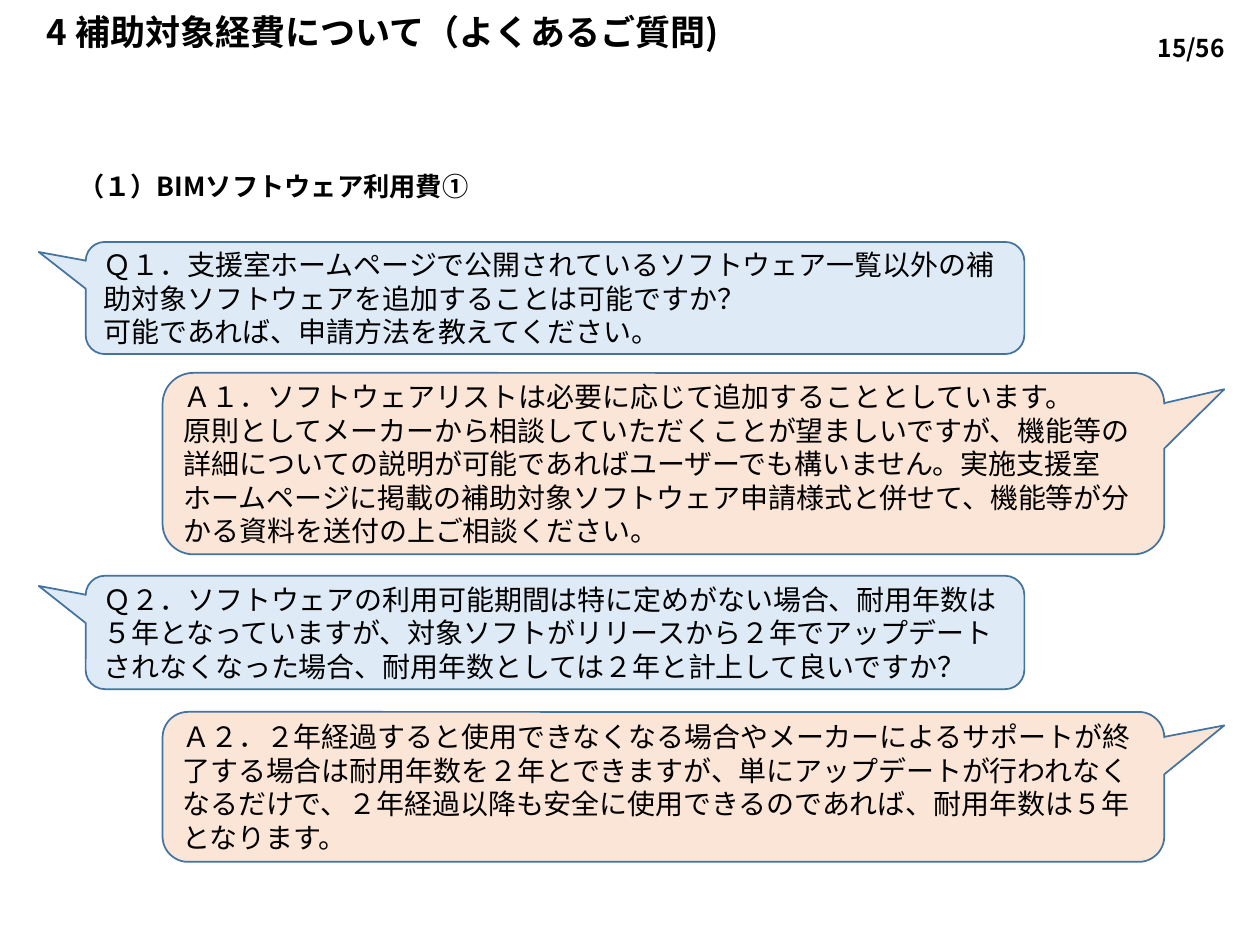
from lxml import etree
from pptx import Presentation
from pptx import util as u
from pptx.dml.color import RGBColor
from pptx.enum import shapes, text
from pptx.oxml.ns import qn

FONT = "Noto Sans CJK JP"
BLACK = RGBColor(0x00, 0x00, 0x00)
BLUE = RGBColor(0xDE, 0xEB, 0xF7)
ORANGE = RGBColor(0xFB, 0xE5, 0xD6)
OUTLINE = RGBColor(0x43, 0x73, 0x9E)

QUESTION = {"left": 0.68, "width": 7.45, "fill": BLUE, "tail": (-0.55, -0.41)}
ANSWER = {"left": 1.29, "width": 7.95, "fill": ORANGE, "tail": (0.56, -0.41)}

DIALOGUE = [
    (QUESTION, 1.92, 0.89, [
        "Ｑ１．支援室ホームページで公開されているソフトウェア一覧以外の補助対象ソフトウェアを追加することは可能ですか？",
        "可能であれば、申請方法を教えてください。"]),
    (ANSWER, 2.96, 1.44, [
        "Ａ１．ソフトウェアリストは必要に応じて追加することとしています。",
        "原則としてメーカーから相談していただくことが望ましいですが、機能等の詳細についての説明が可能であればユーザーでも構いません。"
        "実施支援室ホームページに掲載の補助対象ソフトウェア申請様式と併せて、機能等が分かる資料を送付の上ご相談ください。"]),
    (QUESTION, 4.57, 0.9, [
        "Ｑ２．ソフトウェアの利用可能期間は特に定めがない場合、耐用年数は５年となっていますが、"
        "対象ソフトがリリースから２年でアップデートされなくなった場合、耐用年数としては２年と計上して良いですか？"]),
    (ANSWER, 5.65, 1.19, [
        "Ａ２．２年経過すると使用できなくなる場合やメーカーによるサポートが終了する場合は耐用年数を２年とできますが、"
        "単にアップデートが行われなくなるだけで、２年経過以降も安全に使用できるのであれば、耐用年数は５年となります。"]),
]


def write(tf, lines, size, bold=False, align=text.PP_ALIGN.LEFT, spacing=None,
          anchor=text.MSO_ANCHOR.MIDDLE):
    """Fill a text frame with one paragraph per line."""
    tf.word_wrap = True
    tf.auto_size = text.MSO_AUTO_SIZE.NONE
    tf.vertical_anchor = anchor
    for i, line in enumerate(lines):
        p = tf.paragraphs[0] if i == 0 else tf.add_paragraph()
        p.text = line
        p.alignment = align
        p.line_spacing = spacing
        p.font.size = u.Pt(size)
        p.font.bold = bold
        p.font.color.rgb = BLACK
        p.font.name = FONT
        props = p._p.pPr.find(qn("a:defRPr"))
        etree.SubElement(props, qn("a:ea"), typeface=FONT)


def add_title(slide, line):
    """Place and format the title placeholder."""
    sp = slide.shapes.title
    sp.left, sp.top = u.Inches(0.27), u.Inches(0)
    sp.width, sp.height = u.Inches(8.12), u.Inches(0.54)
    write(sp.text_frame, [line], 20, bold=True, spacing=0.9)


def add_label(slide, box, line, size, **style):
    """Add a bold text box and return its text frame."""
    sp = slide.shapes.add_textbox(*map(u.Inches, box))
    write(sp.text_frame, [line], size, bold=True, **style)
    return sp.text_frame


def add_callout(slide, role, top, height, lines):
    """Add a speech bubble for a question or an answer."""
    sp = slide.shapes.add_shape(
        shapes.MSO_SHAPE.ROUNDED_RECTANGULAR_CALLOUT,
        *map(u.Inches, (role["left"], top, role["width"], height)))
    for i, value in enumerate((*role["tail"], 0.17)):
        sp.adjustments[i] = value
    sp.shadow.inherit = False
    sp.fill.solid()
    sp.fill.fore_color.rgb = role["fill"]
    sp.line.color.rgb = OUTLINE
    sp.line.width = u.Pt(1)
    write(sp.text_frame, lines, 16)


def main():
    """Build the slide and save it."""
    prs = Presentation()
    prs.slide_width, prs.slide_height = u.Inches(10), u.Inches(7.5)
    slide = prs.slides.add_slide(prs.slide_layouts[5])
    add_title(slide, "4 補助対象経費について（よくあるご質問)")
    add_label(slide, (8.91, 0, 1.09, 0.43), "15/56", 14,
              align=text.PP_ALIGN.CENTER, spacing=u.Pt(40))
    for role, top, height, lines in DIALOGUE:
        add_callout(slide, role, top, height, lines)
    tf = add_label(slide, (0.27, 1.3, 9.45, 5.45), "（１）BIMソフトウェア利用費①", 15,
                   anchor=text.MSO_ANCHOR.TOP)
    tf.margin_left = u.Inches(0.35)
    prs.save("out.pptx")


if __name__ == "__main__":
    main()
